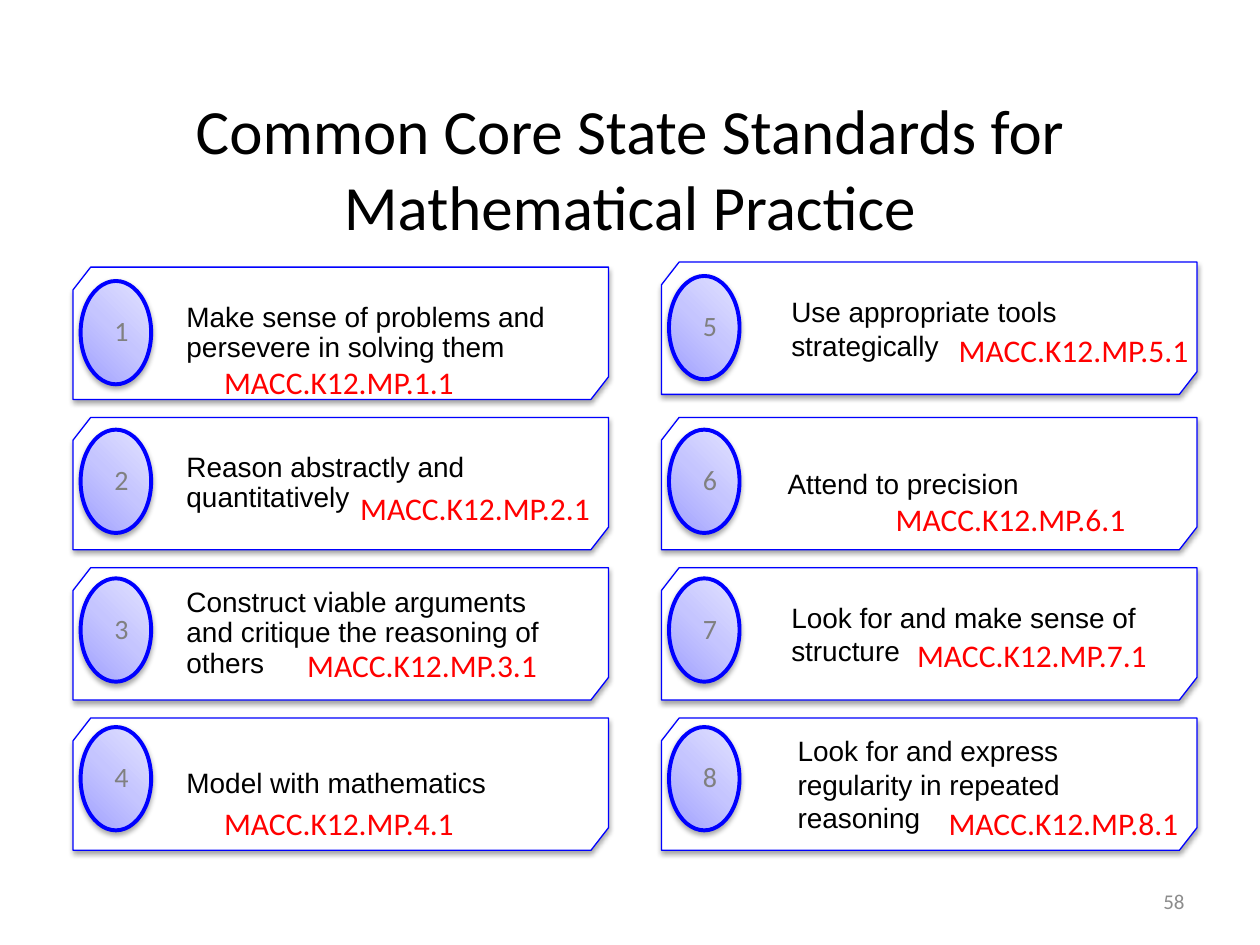
from dataclasses import dataclass

from lxml.etree import SubElement
from pptx import Presentation
from pptx.dml.color import RGBColor
from pptx.enum.shapes import MSO_SHAPE
from pptx.enum.text import MSO_ANCHOR as Anchor, PP_ALIGN as Align
from pptx.oxml import parse_xml
from pptx.oxml.ns import nsdecls, qn
from pptx.util import Inches, Pt


@dataclass(frozen=True)
class Theme:
    """Colours, fonts and type sizes of the slide."""
    ink: str = "000000"
    paper: str = "FFFFFF"
    edge: str = "0000FF"
    number: str = "808080"
    code: str = "FF0000"
    footer: str = "8C8C8C"
    badge_stops: tuple = ((0, "A0A0FF"), (50, "C5C5FF"), (100, "E3E3FF"))
    heading_font: str = "Calibri"
    body_font: str = "Arial"
    title_size: int = 36
    code_size: int = 18
    body_size: int = 16
    footer_size: int = 12


@dataclass(frozen=True)
class Practice:
    """One standard with its text indent and the place of its code."""
    text: str
    indent: float
    code_left: float
    code_top: float


THEME = Theme()
PANEL_WIDTH, PANEL_HEIGHT = 4.25, 1.05
CUT_WIDTH, CUT_HEIGHT = 0.14, 0.18
BADGE_WIDTH, BADGE_HEIGHT = 0.56, 0.82
COLUMN_LEFTS = (0.58, 5.25)
FIRST_TOP, ROW_PITCH, BADGE_PITCH = 2.12, 1.193, 1.18
RIGHT_LIFT = 0.04
PRACTICES = (
    Practice("Make sense of problems and persevere in solving them", 0.5, 1.67, 2.83),
    Practice("Reason abstractly and quantitatively", 0.5, 2.75, 3.83),
    Practice("Construct viable arguments and critique the reasoning of others", 0.5, 2.33, 5.08),
    Practice("Model with mathematics", 0.5, 1.67, 6.33),
    Practice("Use appropriate tools strategically", 0.63, 7.5, 2.58),
    Practice("Attend to precision", 0.6, 7, 3.92),
    Practice("Look for and make sense of structure", 0.63, 7.17, 5),
    Practice("Look for and express regularity in repeated reasoning", 0.68, 7.42, 6.33),
)


def write(frame, text, size, color, font, align=Align.CENTER, spacing=None):
    """Write one run in the frame and return its paragraph and run."""
    paragraph = frame.paragraphs[0]
    paragraph.alignment = align
    paragraph.line_spacing = spacing
    run = paragraph.add_run()
    run.text = text
    run.font.size = Pt(size)
    run.font.name = font
    run.font.color.rgb = RGBColor.from_string(color)
    return paragraph, run


def set_insets(frame, left, top, right, bottom):
    """Set the four margins of a frame in inches and centre it vertically."""
    frame.margin_left, frame.margin_top = Inches(left), Inches(top)
    frame.margin_right, frame.margin_bottom = Inches(right), Inches(bottom)
    frame.vertical_anchor = Anchor.MIDDLE
    frame.word_wrap = True


def outline_shape(shape, weight):
    """Give a shape the blue edge and the soft shadow below it."""
    shape.line.color.rgb = RGBColor.from_string(THEME.edge)
    shape.line.width = Pt(weight)
    shape.shadow.inherit = False
    effects = shape.element.spPr.find(qn("a:effectLst"))
    shadow = SubElement(effects, qn("a:outerShdw"), blurRad=str(Pt(3.1)),
                        dist=str(Pt(1.8)), dir="5400000", rotWithShape="0")
    black = SubElement(shadow, qn("a:srgbClr"), val=THEME.ink)
    SubElement(black, qn("a:alpha"), val="35000")


def fill_gradient(shape):
    """Fill a badge with the diagonal violet gradient."""
    stops = "".join(f'<a:gs pos="{place * 1000}"><a:srgbClr val="{color}"/></a:gs>'
                    for place, color in THEME.badge_stops)
    gradient = parse_xml(f'<a:gradFill {nsdecls("a")} rotWithShape="1"><a:gsLst>{stops}'
                         '</a:gsLst><a:lin ang="18900000" scaled="0"/></a:gradFill>')
    shape.element.spPr.find(qn("a:prstGeom")).addnext(gradient)


def add_panel(shapes, left, top, practice, spacing):
    """Draw a panel with two cut corners and its practice text."""
    right, bottom = left + PANEL_WIDTH, top + PANEL_HEIGHT
    corners = ((right, top), (right, bottom - CUT_HEIGHT), (right - CUT_WIDTH, bottom),
               (left, bottom), (left, top + CUT_HEIGHT), (left + CUT_WIDTH, top))
    points = [(Inches(x), Inches(y)) for x, y in corners]
    builder = shapes.build_freeform(*points[0])
    builder.add_line_segments(points[1:], close=True)
    panel = builder.convert_to_shape()
    panel.fill.solid()
    panel.fill.fore_color.rgb = RGBColor.from_string(THEME.paper)
    outline_shape(panel, 0.75)
    set_insets(panel.text_frame, 0.4, 0.27, 0.4, 0.27)
    paragraph, _ = write(panel.text_frame, practice.text, THEME.body_size, THEME.ink,
                         THEME.body_font, Align.LEFT, spacing)
    properties = paragraph._p.get_or_add_pPr()
    properties.set("marL", str(Inches(practice.indent)))
    properties.set("indent", "0")


def add_badge(shapes, left, top, number):
    """Draw the numbered oval of a panel."""
    badge = shapes.add_shape(MSO_SHAPE.OVAL, Inches(left), Inches(top),
                             Inches(BADGE_WIDTH), Inches(BADGE_HEIGHT))
    fill_gradient(badge)
    outline_shape(badge, 2.25)
    set_insets(badge.text_frame, 0.09, 0, 0, 0)
    _, run = write(badge.text_frame, str(number), THEME.body_size, THEME.number,
                   THEME.heading_font, spacing=0.9)
    run.font._element.insert(0, parse_xml(
        f'<a:ln {nsdecls("a")} w="{Pt(0.75)}"><a:solidFill>'
        f'<a:srgbClr val="{THEME.ink}"/></a:solidFill></a:ln>'))


def add_practice(slide, number, practice):
    """Place the panel and badge of one practice in the two-column grid."""
    column, row = divmod(number - 1, 4)
    left = COLUMN_LEFTS[column]
    lift = RIGHT_LIFT if column and not row else 0
    shapes = slide.shapes.add_group_shape().shapes
    add_panel(shapes, left, FIRST_TOP + row * ROW_PITCH - lift, practice, 1.0 if column else 0.9)
    add_badge(shapes, left + 0.06, FIRST_TOP + 0.11 + row * BADGE_PITCH - lift, number)


def add_label(slide, box, text, size, color, align=Align.CENTER, anchor=Anchor.MIDDLE, wrap=True):
    """Add a text box that holds one line of heading type."""
    frame = slide.shapes.add_textbox(*(Inches(length) for length in box)).text_frame
    frame.word_wrap = wrap
    frame.vertical_anchor = anchor
    write(frame, text, size, color, THEME.heading_font, align)


def build_slide(slide):
    """Compose the title, the eight practices, their codes and the page number."""
    for number, practice in enumerate(PRACTICES, 1):
        add_practice(slide, number, practice)
    add_label(slide, (0.5, 0.83, 9, 1), "Common Core State Standards for Mathematical Practice",
              THEME.title_size, THEME.ink)
    for number, practice in enumerate(PRACTICES, 1):
        add_label(slide, (practice.code_left, practice.code_top, 2.04, 0.4),
                  f"MACC.K12.MP.{number}.1", THEME.code_size, THEME.code,
                  anchor=Anchor.TOP, wrap=False)
    add_label(slide, (7.17, 6.95, 2.33, 0.4), "58", THEME.footer_size, THEME.footer, Align.RIGHT)


def main():
    """Create the presentation and save it."""
    deck = Presentation()
    deck.slide_width, deck.slide_height = Inches(10), Inches(7.5)
    build_slide(deck.slides.add_slide(deck.slide_layouts[6]))
    deck.save("out.pptx")


if __name__ == "__main__":
    main()
